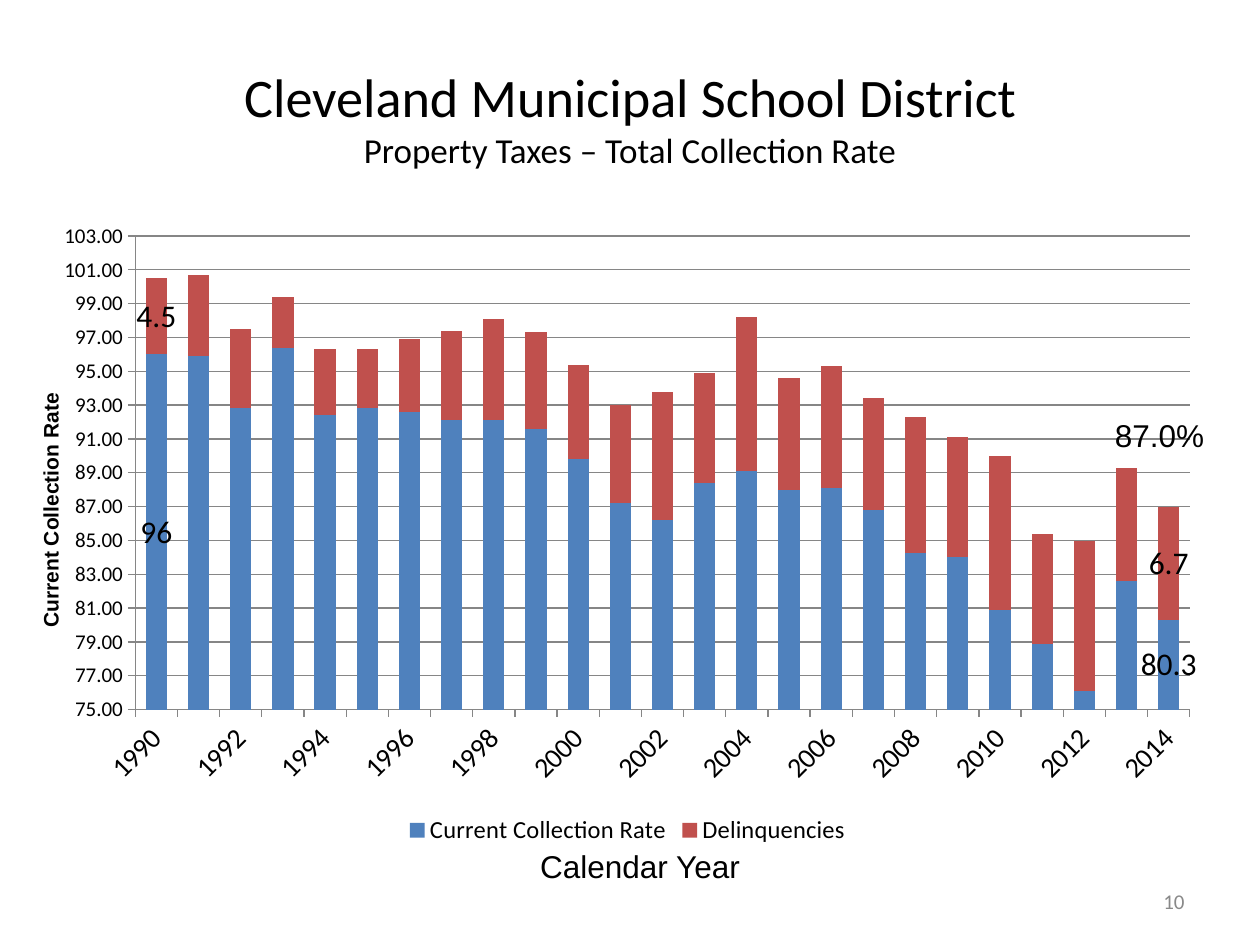
from lxml import etree
from pptx import Presentation
from pptx.chart.data import CategoryChartData
from pptx.dml.color import RGBColor
from pptx.enum.chart import XL_CHART_TYPE as ChartType, XL_LEGEND_POSITION as LegendPosition
from pptx.enum.chart import XL_LABEL_POSITION as LabelPosition, XL_TICK_MARK as TickMark
from pptx.enum.text import MSO_ANCHOR as Anchor, PP_ALIGN as Align
from pptx.oxml import parse_xml
from pptx.oxml.ns import nsdecls, qn
from pptx.util import Inches, Pt

COLORS = {"black": "000000", "gray": "898989", "grid": "868686",
          "current": "4F81BD", "delinquent": "C0504D"}
TITLE = [("Cleveland Municipal School District", 31),
         ("Property Taxes – Total Collection Rate", 20)]
YEARS = range(1990, 2015)
SERIES = [
    ("Current Collection Rate", "current",
     [96, 95.9, 92.8, 96.4, 92.4, 92.8, 92.6, 92.1, 92.1, 91.6, 89.8, 87.2, 86.2,
      88.4, 89.1, 88, 88.1, 86.8, 84.28, 84.04, 80.9, 78.9, 76.1, 82.6, 80.3]),
    ("Delinquencies", "delinquent",
     [4.5, 4.8, 4.7, 3, 3.9, 3.5, 4.3, 5.3, 6, 5.7, 5.6, 5.8, 7.6,
      6.5, 9.1, 6.6, 7.2, 6.6, 8.02, 7.06, 9.1, 6.5, 8.86, 6.7, 6.7]),
]
LABELED_POINTS = (0, len(YEARS) - 1)
PLOT_AREA = {"x": 0.08, "y": 0.04, "w": 0.9, "h": 0.74}
# text, box, size, font, color, alignment, bold, rotation
TEXTS = [
    ("10", (7.17, 6.95, 2.33, 0.4), 12, "Calibri", "gray", Align.RIGHT, False, 0),
    ("Current Collection Rate", (-0.85, 3.68, 2.5, 0.3), 12, "Arial", "black", Align.LEFT, True, 270),
    ("Calendar Year", (4.08, 6.67, 2, 0.4), 18, "Arial", "black", Align.CENTER, False, 0),
    ("87.0%", (8.75, 3.25, 1, 0.4), 18, "Arial", "black", Align.LEFT, False, 0),
]


def color(name):
    return RGBColor.from_string(COLORS[name])


def style(font, size, name="Calibri", color_name="black", bold=False):
    font.size, font.name, font.bold = Pt(size), name, bold
    font.color.rgb = color(color_name)


def add_title(slide):
    title = slide.shapes.title
    title.left, title.top, title.width, title.height = map(Inches, (0.5, 0.3, 9, 1.25))
    frame = title.text_frame
    frame.text = "\v".join(text for text, _ in TITLE)
    frame.vertical_anchor = Anchor.MIDDLE
    paragraph = frame.paragraphs[0]
    paragraph.alignment = Align.CENTER
    for run, (_, size) in zip(paragraph.runs, TITLE):
        style(run.font, size)


def add_text(slide, text, box, size, font, color_name, alignment, bold, rotation):
    shape = slide.shapes.add_textbox(*map(Inches, box))
    shape.rotation = rotation
    frame = shape.text_frame
    frame.word_wrap = True
    frame.text = text
    frame.vertical_anchor = Anchor.MIDDLE if color_name == "gray" else Anchor.TOP
    paragraph = frame.paragraphs[0]
    paragraph.alignment = alignment
    style(paragraph.runs[0].font, size, font, color_name, bold)


def style_axis(axis, size):
    axis.major_tick_mark, axis.minor_tick_mark = TickMark.OUTSIDE, TickMark.NONE
    axis.format.line.color.rgb = color("grid")
    style(axis.tick_labels.font, size)


def set_plot_area(chart):
    sizes = "".join(f'<c:{key} val="{value}"/>' for key, value in PLOT_AREA.items())
    layout = parse_xml(
        f'<c:layout {nsdecls("c")}><c:manualLayout><c:layoutTarget val="inner"/>'
        f'<c:xMode val="edge"/><c:yMode val="edge"/>{sizes}</c:manualLayout></c:layout>')
    plot_area = chart.element.find(".//" + qn("c:plotArea"))
    for old in plot_area.findall(qn("c:layout")):
        plot_area.remove(old)
    plot_area.insert(0, layout)


def add_chart(slide):
    data = CategoryChartData()
    data.categories = [str(year) for year in YEARS]
    for name, _, values in SERIES:
        data.add_series(name, values)
    box = map(Inches, (0.33, 1.67, 9.3, 5.08))
    chart = slide.shapes.add_chart(ChartType.COLUMN_STACKED, *box, data).chart
    style(chart.font, 18)
    chart.has_title = False
    chart.has_legend = True
    chart.legend.position = LegendPosition.BOTTOM
    chart.legend.include_in_layout = False
    style(chart.legend.font, 14)

    value_axis = chart.value_axis
    style_axis(value_axis, 12)
    value_axis.minimum_scale, value_axis.maximum_scale = 75, 103
    value_axis.major_unit = 2
    value_axis.tick_labels.number_format = "#,##0.00"
    value_axis.tick_labels.number_format_is_linked = False
    value_axis.major_gridlines.format.line.color.rgb = color("grid")

    category_axis = chart.category_axis
    style_axis(category_axis, 16)
    axis_element = category_axis.format.line and chart.element.find(".//" + qn("c:catAx"))
    axis_element.find(qn("c:txPr")).find(qn("a:bodyPr")).set("rot", "-2700000")
    skip = etree.Element(qn("c:tickLblSkip"), val="2")
    axis_element.find(qn("c:noMultiLvlLbl")).addprevious(skip)

    plot = chart.plots[0]
    plot.gap_width, plot.overlap, plot.vary_by_categories = 98, 100, False
    for series, (_, color_name, _) in zip(plot.series, SERIES):
        series.format.fill.solid()
        series.format.fill.fore_color.rgb = color(color_name)
        series.data_labels.show_value = False
        for index in LABELED_POINTS:
            label = series.points[index].data_label
            style(label.font, 18)
            label.position = LabelPosition.CENTER
    set_plot_area(chart)


def main():
    """Build the property tax collection rate slide."""
    presentation = Presentation()
    presentation.slide_width, presentation.slide_height = Inches(10), Inches(7.5)
    slide = presentation.slides.add_slide(presentation.slide_layouts[5])
    add_title(slide)
    add_chart(slide)
    for text in TEXTS:
        add_text(slide, *text)
    presentation.save("out.pptx")


if __name__ == "__main__":
    main()
